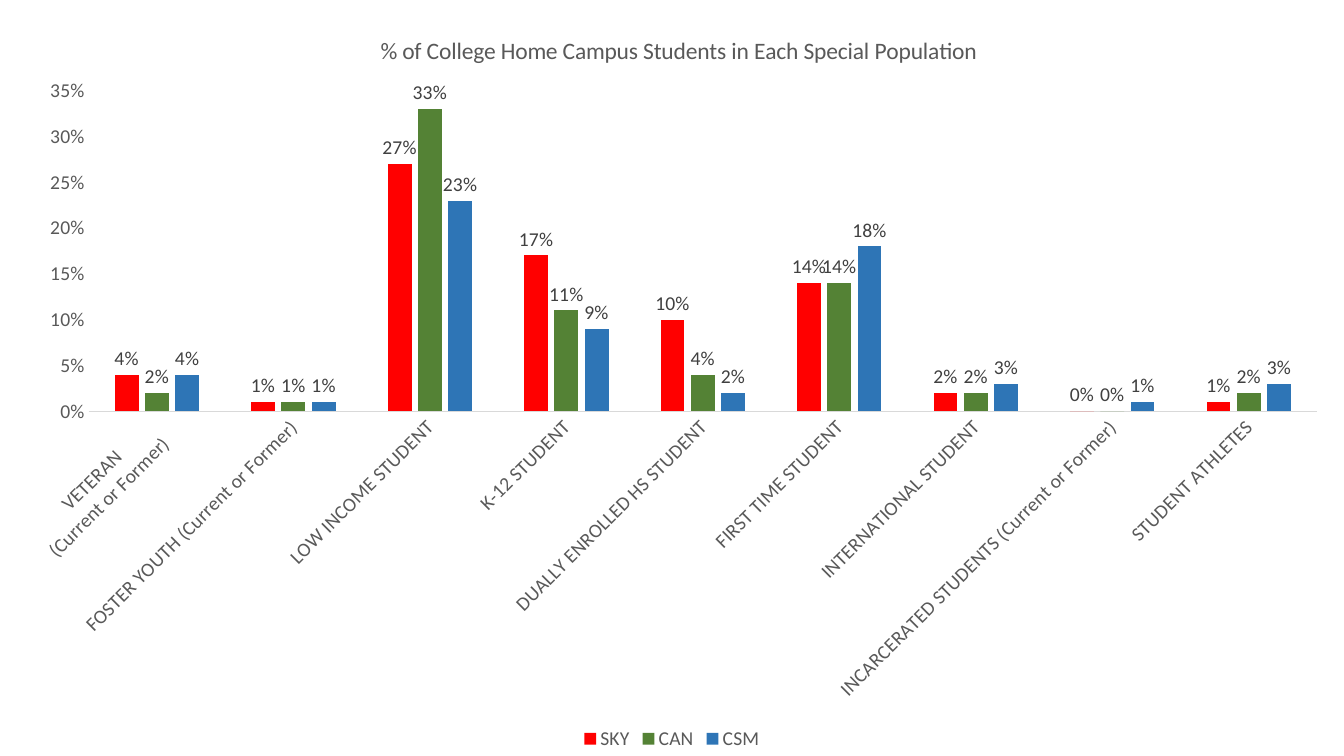
from lxml import etree
from pptx import Presentation
from pptx.chart.data import CategoryChartData
from pptx.dml.color import RGBColor
from pptx.enum.chart import XL_CHART_TYPE, XL_LABEL_POSITION, XL_LEGEND_POSITION, XL_TICK_MARK
from pptx.oxml.ns import qn
from pptx.util import Cm, Pt

COLUMNS = XL_CHART_TYPE.COLUMN_CLUSTERED
ABOVE = XL_LABEL_POSITION.OUTSIDE_END
BOTTOM = XL_LEGEND_POSITION.BOTTOM
NO_TICK = XL_TICK_MARK.NONE

THEME = {
    "font": "Calibri",
    "title": Pt(16.8),
    "text": Pt(14),
    "grey": RGBColor(0x59, 0x59, 0x59),
    "dark": RGBColor(0x40, 0x40, 0x40),
    "line": RGBColor(0xD9, 0xD9, 0xD9),
    "bars": {
        "SKY": RGBColor(0xFF, 0x00, 0x00),
        "CAN": RGBColor(0x54, 0x82, 0x35),
        "CSM": RGBColor(0x2E, 0x75, 0xB6),
    },
}
GROUPS = [
    "VETERAN\n(Current or Former)",
    "FOSTER YOUTH (Current or Former)",
    "LOW INCOME STUDENT",
    "K-12 STUDENT",
    "DUALLY ENROLLED HS STUDENT",
    "FIRST TIME STUDENT",
    "INTERNATIONAL STUDENT",
    "INCARCERATED STUDENTS (Current or Former)",
    "STUDENT ATHLETES",
]
SHARES = {
    "SKY": [0.04, 0.01, 0.27, 0.17, 0.10, 0.14, 0.02, 0, 0.01],
    "CAN": [0.02, 0.01, 0.33, 0.11, 0.04, 0.14, 0.02, 0, 0.02],
    "CSM": [0.04, 0.01, 0.23, 0.09, 0.02, 0.18, 0.03, 0.01, 0.03],
}


def style(font, size="text", color="grey"):
    looks = {"name": THEME["font"], "size": THEME[size], "bold": False}
    for key, value in looks.items():
        setattr(font, key, value)
    font.color.rgb = THEME[color]


def place(part, after, **spots):
    """Fix a chart part at fractions of the chart area."""
    for old in part.findall(qn("c:layout")):
        part.remove(old)
    layout = etree.Element(qn("c:layout"))
    manual = etree.SubElement(layout, qn("c:manualLayout"))
    for key, value in spots.items():
        etree.SubElement(manual, qn("c:" + key), val=str(value))
    if after is None:
        part.insert(0, layout)
    else:
        part.find(qn(after)).addnext(layout)


deck = Presentation()
deck.slide_width, deck.slide_height = Cm(33.87), Cm(19.05)
slide = deck.slides.add_slide(deck.slide_layouts[6])

data = CategoryChartData(number_format="0%")
data.categories = GROUPS
for name, shares in SHARES.items():
    data.add_series(name, shares)
frame = slide.shapes.add_chart(COLUMNS, 0, 0, deck.slide_width, deck.slide_height, data)
chart = frame.chart
style(chart.font)

# Title
chart.has_title = True
title = chart.chart_title
title.text_frame.text = "% of College Home Campus Students in Each Special Population"
style(title.text_frame.paragraphs[0].runs[0].font, "title")
place(title._element, "c:tx", xMode="edge", yMode="edge", x=0.28, y=0.04)

# Bars and their labels
plot = chart.plots[0]
plot.gap_width, plot.overlap = 219, -27
plot.vary_by_categories = False
for bars in plot.series:
    bars.format.fill.solid()
    bars.format.fill.fore_color.rgb = THEME["bars"][bars.name]
    labels = bars.data_labels
    looks = {"show_value": True, "position": ABOVE,
             "number_format": "0%", "number_format_is_linked": False}
    for key, value in looks.items():
        setattr(labels, key, value)
    style(labels.font, color="dark")

# Axes
groups, scale = chart.category_axis, chart.value_axis
for axis in (groups, scale):
    axis.major_tick_mark = axis.minor_tick_mark = NO_TICK
    axis.has_major_gridlines = False
    style(axis.tick_labels.font)
groups.format.line.color.rgb = THEME["line"]
groups.format.line.width = Pt(0.75)
groups._element.find(qn("c:txPr")).find(qn("a:bodyPr")).set("rot", "-2700000")
scale.format.line.fill.background()
scale.minimum_scale, scale.maximum_scale, scale.major_unit = 0, 0.35, 0.05
scale.tick_labels.number_format = "0%"
scale.tick_labels.number_format_is_linked = False
area = plot._element.getparent()
place(area, None, layoutTarget="inner", xMode="edge", yMode="edge",
      x=0.066, y=0.12, w=0.914, h=0.424)

# Legend
chart.has_legend = True
legend = chart.legend
legend.position = BOTTOM
legend.include_in_layout = False
style(legend.font)
place(legend._element, "c:legendPos", xMode="edge", yMode="edge", x=0.43, y=0.96)

deck.save("out.pptx")
